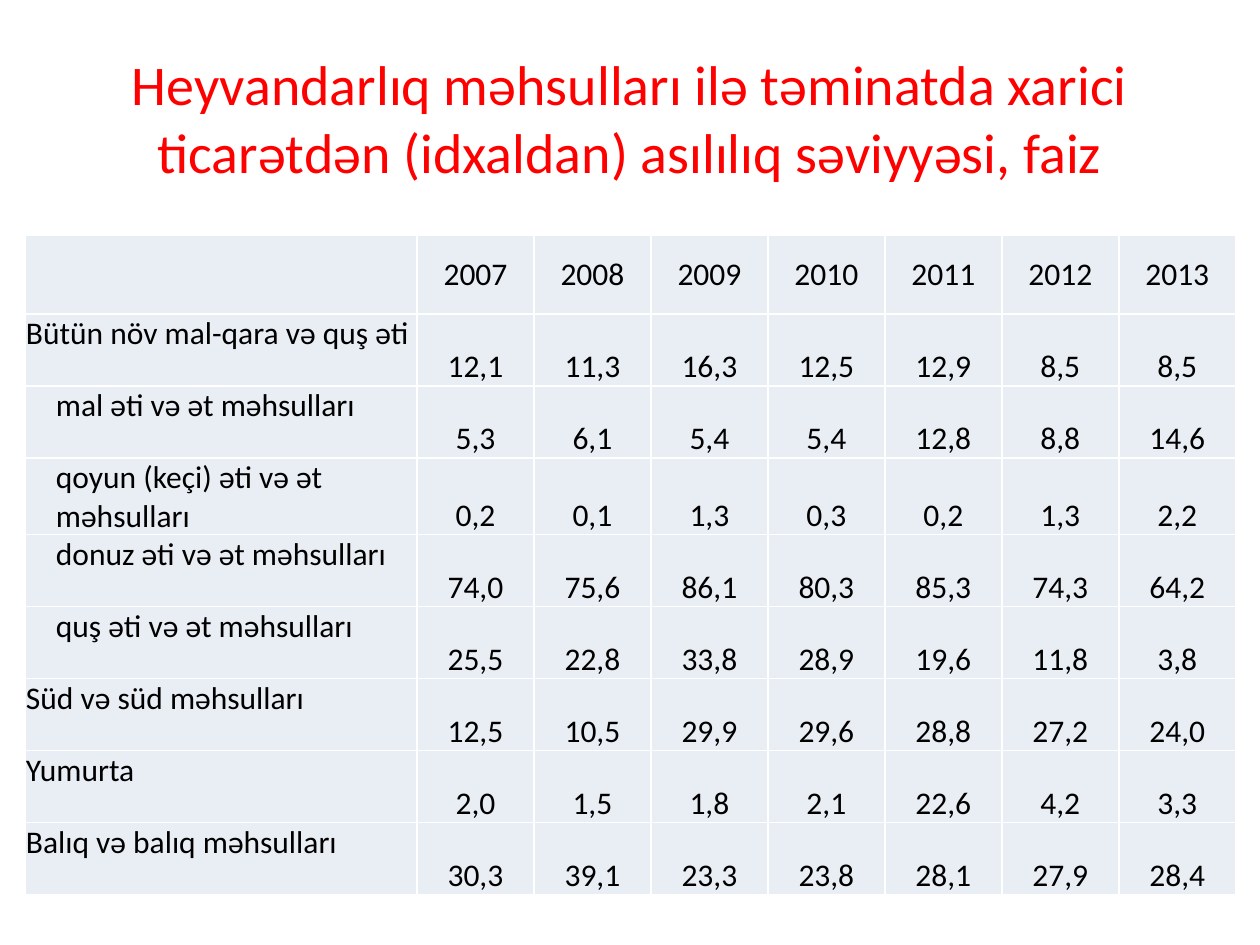
"""Build a slide with a table of import dependence for livestock products."""
import lxml.etree
import pptx
import pptx.dml.color
import pptx.enum.text
import pptx.oxml.ns
import pptx.util

TITLE = "Heyvandarlıq məhsulları ilə təminatda xarici ticarətdən (idxaldan) asılılıq səviyyəsi, faiz"
YEARS = range(2007, 2014)
PRODUCTS = [
    ("Bütün növ mal-qara və quş əti", 0, "12,1 11,3 16,3 12,5 12,9 8,5 8,5"),
    ("mal əti və ət məhsulları", 1, "5,3 6,1 5,4 5,4 12,8 8,8 14,6"),
    ("qoyun (keçi) əti və ət məhsulları", 1, "0,2 0,1 1,3 0,3 0,2 1,3 2,2"),
    ("donuz əti və ət məhsulları", 1, "74,0 75,6 86,1 80,3 85,3 74,3 64,2"),
    ("quş əti və ət məhsulları", 1, "25,5 22,8 33,8 28,9 19,6 11,8 3,8"),
    ("Süd və süd məhsulları", 0, "12,5 10,5 29,9 29,6 28,8 27,2 24,0"),
    ("Yumurta", 0, "2,0 1,5 1,8 2,1 22,6 4,2 3,3"),
    ("Balıq və balıq məhsulları", 0, "30,3 39,1 23,3 23,8 28,1 27,9 28,4"),
]
THEME = {
    "font": "Calibri", "title": "FF0000", "text": "000000",
    "cell": "E9EDF4", "border": "FFFFFF", "title_size": 32, "cell_size": 18,
}
PAGE = (1260, 945)
TITLE_BOX = (63, 38, 1134, 158)
TABLE_ORIGIN = (25, 235)
COLUMN_WIDTHS = [392] + [117] * len(YEARS)
ROW_HEIGHTS = [79] + [72] * len(PRODUCTS)
CELL_MARGIN = 1
INDENT = 30
ALIGN = pptx.enum.text.PP_ALIGN
ANCHOR = pptx.enum.text.MSO_ANCHOR


def px(length):
    return pptx.util.Emu(round(length * 914400 / 126))


def write(frame, text, *, size, color, align=ALIGN.LEFT):
    frame.word_wrap = True
    para = frame.paragraphs[0]
    para.alignment = align
    span = para.add_run()
    span.text = text
    span.font.name = THEME["font"]
    span.font.size = pptx.util.Pt(size)
    span.font.color.rgb = pptx.dml.color.RGBColor.from_string(color)


def style_cell(cell):
    properties = cell._tc.get_or_add_tcPr()
    qualify = pptx.oxml.ns.qn
    for side in ("L", "R", "T", "B"):
        line = lxml.etree.SubElement(properties, qualify(f"a:ln{side}"), w=str(pptx.util.Pt(1)))
        fill = lxml.etree.SubElement(line, qualify("a:solidFill"))
        lxml.etree.SubElement(fill, qualify("a:srgbClr"), val=THEME["border"])
    cell.fill.solid()
    cell.fill.fore_color.rgb = pptx.dml.color.RGBColor.from_string(THEME["cell"])


def fill_cell(cell, text, *, anchor, align=ALIGN.LEFT, indent=0):
    cell.margin_left = px(CELL_MARGIN + indent)
    cell.margin_right = cell.margin_top = px(CELL_MARGIN)
    cell.margin_bottom = 0
    cell.vertical_anchor = anchor
    write(cell.text_frame, text, size=THEME["cell_size"], color=THEME["text"], align=align)


def add_title(page):
    box = page.shapes.add_textbox(*map(px, TITLE_BOX))
    box.text_frame.vertical_anchor = ANCHOR.MIDDLE
    write(box.text_frame, TITLE, size=THEME["title_size"], color=THEME["title"], align=ALIGN.CENTER)


def add_product_table(page):
    size = (sum(COLUMN_WIDTHS), sum(ROW_HEIGHTS))
    table = page.shapes.add_table(
        len(ROW_HEIGHTS), len(COLUMN_WIDTHS), *map(px, TABLE_ORIGIN + size)
    ).table
    table.first_row = table.horz_banding = False
    for column, width in zip(table.columns, COLUMN_WIDTHS):
        column.width = px(width)
    for row, height in zip(table.rows, ROW_HEIGHTS):
        row.height = px(height)
    for cell in table.iter_cells():
        style_cell(cell)
    for column, year in enumerate(YEARS, 1):
        fill_cell(table.cell(0, column), str(year), anchor=ANCHOR.MIDDLE, align=ALIGN.CENTER)
    for row, (product, level, values) in enumerate(PRODUCTS, 1):
        fill_cell(table.cell(row, 0), product, anchor=ANCHOR.TOP, indent=level * INDENT)
        for column, value in enumerate(values.split(), 1):
            fill_cell(table.cell(row, column), value, anchor=ANCHOR.BOTTOM, align=ALIGN.CENTER)


def main():
    deck = pptx.Presentation()
    deck.slide_width, deck.slide_height = map(px, PAGE)
    page = deck.slides.add_slide(deck.slide_layouts[6])
    add_title(page)
    add_product_table(page)
    deck.save("out.pptx")


if __name__ == "__main__":
    main()
